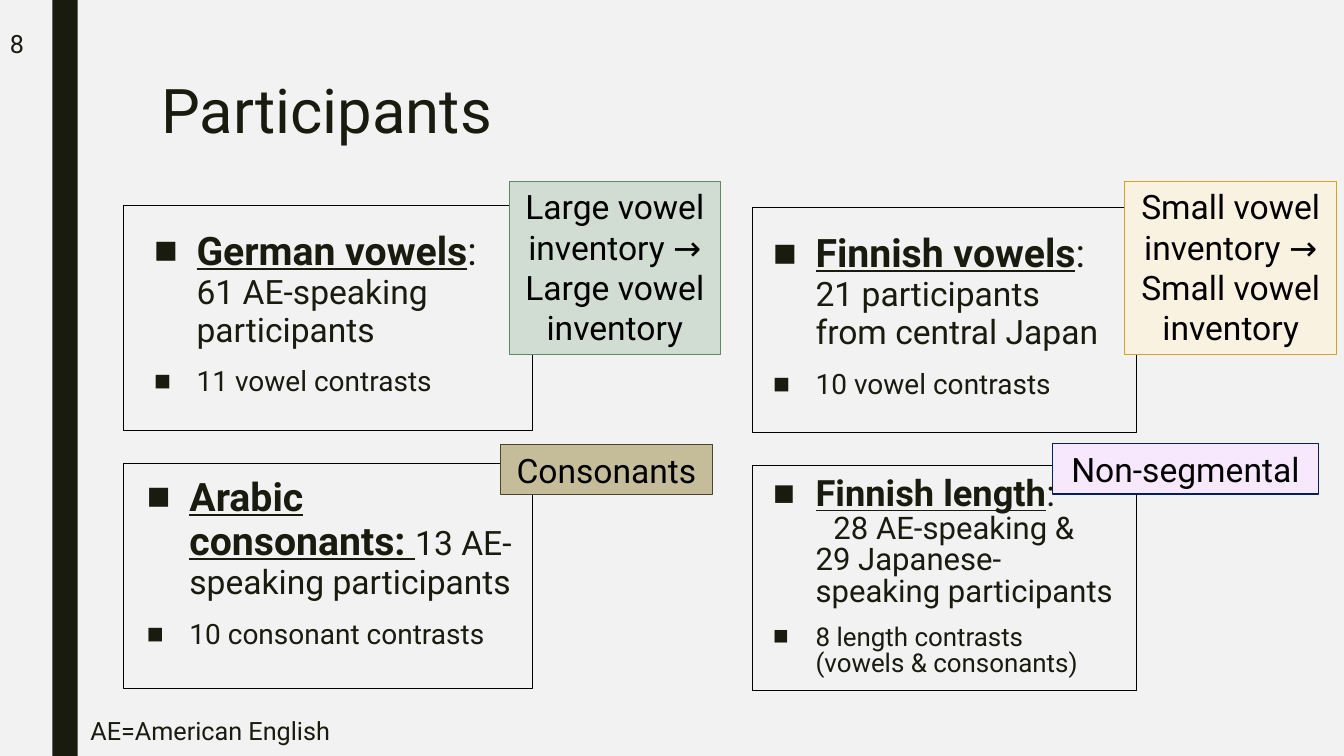
from lxml import etree
from pptx import Presentation
from pptx.dml.color import RGBColor
from pptx.enum import shapes, text
from pptx.oxml import ns
from pptx.util import Cm, Pt

FONT, INK, PAPER, BLACK = "Roboto", "191B0E", "F2F2F2", "000000"
INDENT = Cm(1.07)

# Each group: frame box, list box, sizes (heading, detail, contrasts), line spacing,
# heading, text after the heading, detail, contrasts
GROUPS = [
    ((3.12, 5.18, 10.29, 5.66), (3.63, 5.66, 9.07, 4.67), (28, 24, 20), 0.94,
     "German vowels", ": ", "61 AE-speaking participants", "11 vowel contrasts"),
    ((18.97, 5.23, 9.68, 5.66), (19.23, 5.72, 9.12, 4.85), (28, 24, 20), 0.94,
     "Finnish vowels", ": ", "21 participants from central Japan", "10 vowel contrasts"),
    ((3.12, 11.68, 10.29, 5.66), (3.45, 11.86, 10.03, 5.87), (28, 24, 20), 0.94,
     "Arabic consonants: ", "", "13 AE-speaking participants", "10 consonant contrasts"),
    ((18.97, 11.73, 9.68, 5.66), (19.23, 11.91, 9.12, 5.44), (25.9, 22.2, 18.5), 0.84,
     "Finnish length", ":\n", "\t28 AE-speaking & 29 Japanese-speaking participants",
     "8 length contrasts (vowels & consonants)"),
]

# Each tag: box, fill, line, label
TAGS = [
    ((12.83, 4.57, 5.33, 4.37), "D1DDD2", "638764",
     "Large vowel inventory → Large vowel inventory"),
    ((28.35, 4.57, 5.33, 4.37), "FAF2E1", "D7A124",
     "Small vowel inventory → Small vowel inventory"),
    ((12.62, 11.2, 5.33, 1.27), "C5BD99", "4A452A", "Consonants"),
    ((26.52, 11.18, 6.71, 1.27), "F7E8FE", "002060", "Non-segmental"),
]


def rgb(value):
    return RGBColor.from_string(value)


def place(sp, box):
    sp.left, sp.top, sp.width, sp.height = (Cm(v) for v in box)


def write(p, words, size=18, color=INK, bold=False, underline=False):
    """Add formatted text to a paragraph; a newline becomes a line break."""
    for i, line in enumerate(words.split("\n")):
        if i:
            p.add_line_break()
        if line:
            r = p.add_run()
            r.text = line
            f = r.font
            f.name, f.size, f.color.rgb = FONT, Pt(size), rgb(color)
            f.bold, f.underline = bold, underline


def space(p, line):
    p.line_spacing, p.space_before, p.space_after = line, Pt(10), Pt(2)


def bullet(p):
    pPr = p._p.get_or_add_pPr()
    pPr.set("marL", str(INDENT))
    pPr.set("indent", str(-INDENT))
    etree.SubElement(pPr, ns.qn("a:buFont"), typeface="Arial")
    etree.SubElement(pPr, ns.qn("a:buChar"), char="■")
    tabs = etree.SubElement(pPr, ns.qn("a:tabLst"))
    etree.SubElement(tabs, ns.qn("a:tab"), pos=str(Cm(1.52)), algn="l")


def add_box(slide, box, fill, line=None, width=0.5):
    sp = slide.shapes.add_shape(shapes.MSO_SHAPE.RECTANGLE, *(Cm(v) for v in box))
    sp.shadow.inherit = False
    sp.fill.solid()
    sp.fill.fore_color.rgb = rgb(fill)
    if line:
        sp.line.color.rgb = rgb(line)
        sp.line.width = Pt(width)
    else:
        sp.line.fill.background()
    return sp


def add_tag(slide, box, fill, line, label):
    tf = add_box(slide, box, fill, line, 0.75).text_frame
    tf.word_wrap = True
    tf.vertical_anchor = text.MSO_ANCHOR.TOP
    p = tf.paragraphs[0]
    p.alignment = text.PP_ALIGN.CENTER
    write(p, label, 24, BLACK)


def add_note(slide, box, words):
    tf = slide.shapes.add_textbox(*(Cm(v) for v in box)).text_frame
    tf.word_wrap = True
    write(tf.paragraphs[0], words)
    return tf


def prepare(slide, sp, box):
    """Position a placeholder above the frames and return its text frame."""
    slide.shapes._spTree.append(sp._element)
    place(sp, box)
    tf = sp.text_frame
    tf.word_wrap = True
    tf.auto_size = text.MSO_AUTO_SIZE.NONE
    tf.vertical_anchor = text.MSO_ANCHOR.TOP
    return tf


def fill_list(tf, sizes, line, heading, tail, detail, contrasts):
    p = tf.paragraphs[0]
    write(p, heading, sizes[0], bold=True, underline=True)
    write(p, tail, sizes[0])
    write(p, detail, sizes[1])
    write(tf.add_paragraph(), contrasts, sizes[2])
    for p in tf.paragraphs:
        space(p, line)
        bullet(p)


def main():
    prs = Presentation()
    prs.slide_width, prs.slide_height = Cm(33.87), Cm(19.05)
    slide = prs.slides.add_slide(prs.slide_layouts[4])
    slide.background.fill.solid()
    slide.background.fill.fore_color.rgb = rgb(PAPER)

    # Side bar and frames
    add_box(slide, (1.32, 0, 0.64, 19.05), INK)
    for group in GROUPS:
        add_box(slide, group[0], PAPER, BLACK)

    # Title
    tf = prepare(slide, slide.shapes.title, (3.81, 1.91, 26.67, 2.49))
    p = tf.paragraphs[0]
    p.alignment, p.line_spacing = text.PP_ALIGN.LEFT, 0.89
    write(p, "Participants", 44)

    # Participant lists
    bodies = [ph for ph in slide.placeholders if ph.placeholder_format.idx > 0]
    for ph, (_, box, *content) in zip(bodies, GROUPS):
        fill_list(prepare(slide, ph, box), *content)

    # Slide number and abbreviation
    number = add_note(slide, (0, 0.53, 1.42, 1.12), "8")
    number.vertical_anchor = text.MSO_ANCHOR.MIDDLE
    note = add_note(slide, (2.03, 17.96, 6.58, 1.12), "AE=American English")
    space(note.paragraphs[0], 0.94)

    # Tags over the frames
    for tag in TAGS:
        add_tag(slide, *tag)

    prs.save("out.pptx")


if __name__ == "__main__":
    main()
